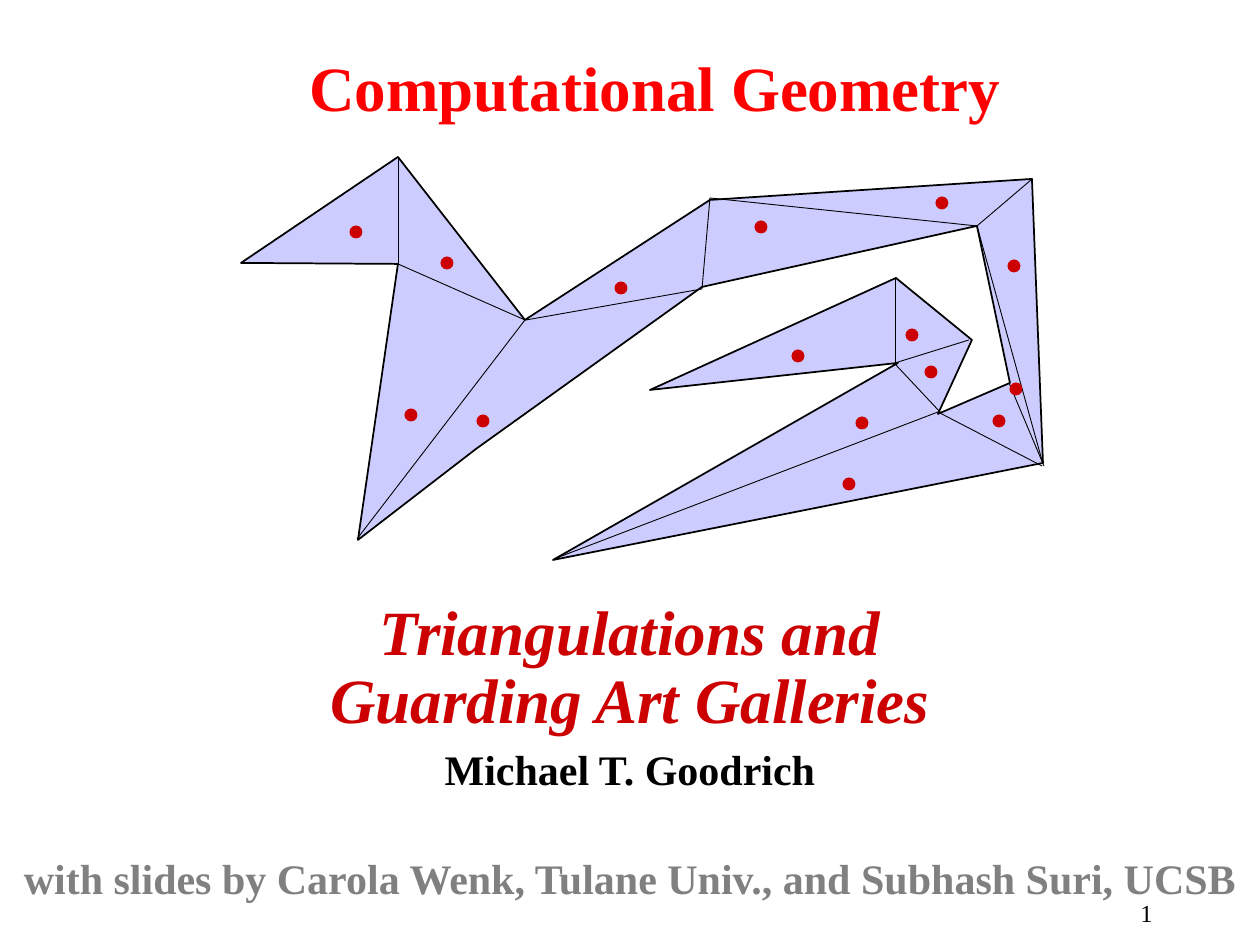
from dataclasses import dataclass

from lxml import etree
from pptx import Presentation
from pptx.dml.color import RGBColor
from pptx.enum.shapes import MSO_CONNECTOR, MSO_SHAPE
from pptx.enum.text import MSO_ANCHOR, PP_ALIGN
from pptx.oxml.ns import qn
from pptx.util import Pt

EMU_PER_PX = 914400 / 126
STRAIGHT = MSO_CONNECTOR.STRAIGHT
ELLIPSE = MSO_SHAPE.OVAL
TOP, MIDDLE = MSO_ANCHOR.TOP, MSO_ANCHOR.MIDDLE
CENTER, RIGHT = PP_ALIGN.CENTER, PP_ALIGN.RIGHT

FONT = "Times New Roman"
BLACK = RGBColor(0x00, 0x00, 0x00)
RED = RGBColor(0xFF, 0x00, 0x00)
DARK_RED = RGBColor(0xCC, 0x00, 0x00)
GRAY = RGBColor(0x80, 0x80, 0x80)
LAVENDER = RGBColor(0xCC, 0xCC, 0xFF)

Point = tuple[int, int]
GUARD_SIZE = 13


@dataclass
class TextLine:
    lines: tuple[str, ...]
    size: int
    color: RGBColor
    bold: bool = True
    italic: bool = False
    before: int = 0
    spacing: float = 1.0


@dataclass
class TextArea:
    left: int
    top: int
    width: int
    height: int
    paragraphs: list[TextLine]
    align: PP_ALIGN = CENTER
    anchor: MSO_ANCHOR = TOP


TEXT_AREAS = [
    TextArea(1062, 892, 103, 32, [TextLine(("1",), 14, BLACK, bold=False)], RIGHT),
    TextArea(93, 18, 1124, 136,
             [TextLine(("Computational Geometry",), 36, RED)], anchor=MIDDLE),
    TextArea(0, 595, 1260, 324, [
        TextLine(("Triangulations and", "Guarding Art Galleries"), 36, DARK_RED,
                 italic=True, before=4, spacing=0.9),
        TextLine(("Michael T. Goodrich",), 24, BLACK, before=7, spacing=0.9),
        TextLine(("with slides by Carola Wenk, Tulane Univ., and Subhash Suri, UCSB",),
                 24, GRAY, before=36, spacing=0.9),
    ]),
]

GALLERY: list[Point] = [
    (241, 263), (398, 157), (525, 320), (710, 200), (1032, 179), (1043, 463),
    (553, 560), (898, 363), (650, 390), (896, 278), (972, 340), (938, 414),
    (1010, 383), (977, 226), (702, 287), (476, 449), (358, 540), (398, 264),
]

# Each chain is a run of diagonals joined end to end
DIAGONAL_CHAINS: list[list[Point]] = [
    [(398, 157), (398, 264), (525, 320), (357, 539)],
    [(526, 320), (702, 289), (710, 198), (977, 226), (1031, 180)],
    [(977, 226), (1043, 464)],
    [(1009, 383), (1044, 466)],
    [(1042, 466), (938, 412), (554, 559)],
    [(895, 278), (895, 364), (941, 413)],
    [(895, 363), (969, 340)],
]

GUARDS: list[Point] = [
    (356, 232), (447, 263), (411, 415), (483, 421), (621, 288),
    (761, 227), (942, 203), (1014, 266), (1016, 389), (999, 421),
    (849, 484), (862, 423), (931, 372), (912, 335), (798, 356),
]


def px(length: float) -> int:
    return round(length * EMU_PER_PX)


def add_text(page, area: TextArea) -> None:
    box = page.shapes.add_textbox(px(area.left), px(area.top),
                                  px(area.width), px(area.height))
    frame = box.text_frame
    frame.word_wrap = True
    frame.vertical_anchor = area.anchor
    for index, item in enumerate(area.paragraphs):
        para = frame.add_paragraph() if index else frame.paragraphs[0]
        layout = {"alignment": area.align, "line_spacing": item.spacing,
                  "space_before": Pt(item.before)}
        for name, value in layout.items():
            setattr(para, name, value)
        formats = {"name": FONT, "size": Pt(item.size),
                   "bold": item.bold, "italic": item.italic}
        for number, line in enumerate(item.lines):
            if number:
                para.add_line_break()
            span = para.add_run()
            span.text = line
            for name, value in formats.items():
                setattr(span.font, name, value)
            span.font.color.rgb = item.color


def add_gallery(page, corners: list[Point]) -> None:
    builder = page.shapes.build_freeform(*corners[0], scale=EMU_PER_PX)
    builder.add_line_segments(corners[1:], close=True)
    outline = builder.convert_to_shape()
    outline.shadow.inherit = False
    outline.fill.solid()
    outline.fill.fore_color.rgb = LAVENDER
    outline.line.color.rgb = BLACK
    outline.line.width = Pt(1)


def add_diagonal(page, start: Point, end: Point) -> None:
    diagonal = page.shapes.add_connector(STRAIGHT, *map(px, start + end))
    diagonal.line.color.rgb = BLACK
    diagonal.line.width = Pt(0.5)
    etree.SubElement(diagonal._element.spPr, qn("a:effectLst"))


def add_guard(page, center: Point) -> None:
    left, top = (px(value - GUARD_SIZE / 2) for value in center)
    guard = page.shapes.add_shape(ELLIPSE, left, top, px(GUARD_SIZE), px(GUARD_SIZE))
    guard.shadow.inherit = False
    guard.fill.solid()
    guard.fill.fore_color.rgb = DARK_RED
    guard.line.fill.background()


def main() -> None:
    deck = Presentation()
    deck.slide_width, deck.slide_height = px(1260), px(945)
    page = deck.slides.add_slide(deck.slide_layouts[6])

    # Page number, title and credits
    for area in TEXT_AREAS:
        add_text(page, area)

    # Triangulated gallery with a guard in each triangle
    add_gallery(page, GALLERY)
    for chain in DIAGONAL_CHAINS:
        for start, end in zip(chain, chain[1:]):
            add_diagonal(page, start, end)
    for center in GUARDS:
        add_guard(page, center)

    deck.save("out.pptx")


if __name__ == "__main__":
    main()
